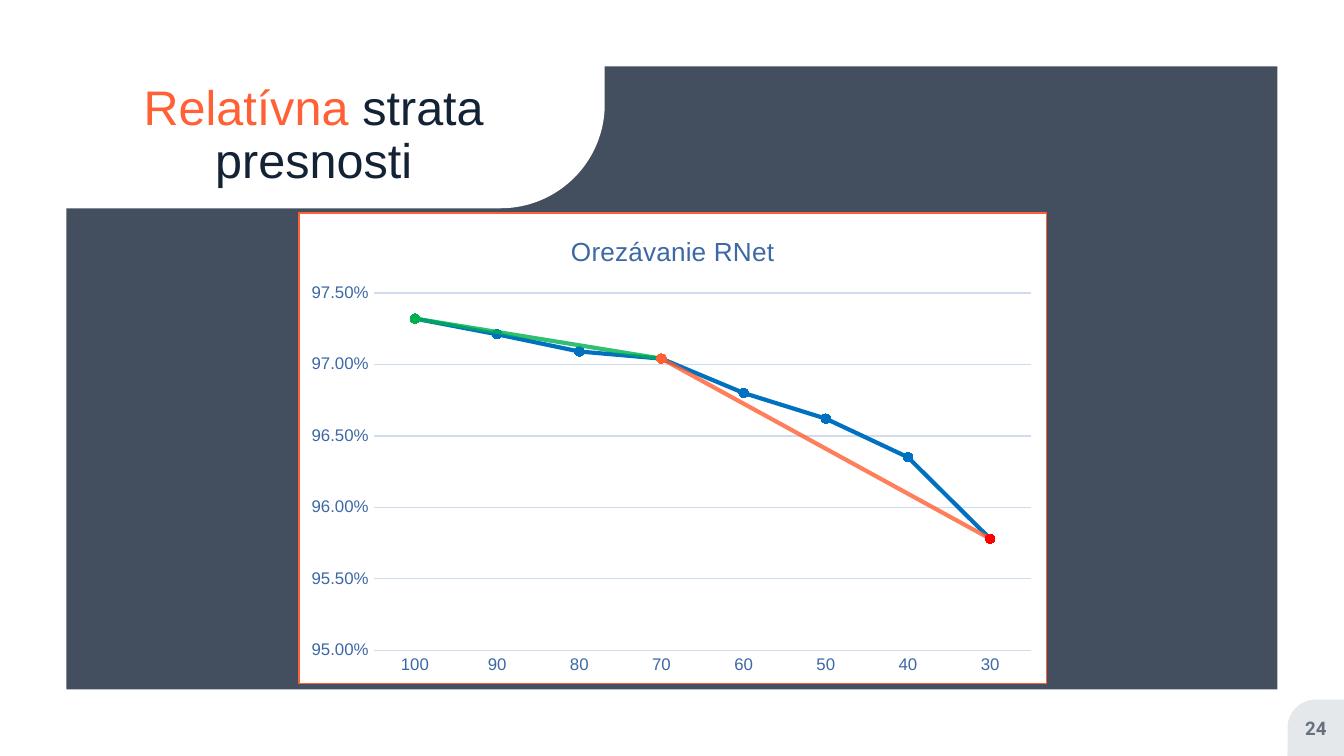
from lxml import etree
from pptx import Presentation
from pptx.chart.data import CategoryChartData
from pptx.dml.color import RGBColor
from pptx.enum import chart as ch, shapes, text
from pptx.oxml import ns, parse_xml
from pptx.util import Inches, Pt

WIDTH = 10
HEIGHT = WIDTH * 9 / 16
NAVY, ORANGE, AXIS, GRID, WHITE = "142236", "FF6035", "3D68A5", "CFDCED", "FFFFFF"

heading = [("Relatívna", ORANGE), (" strata presnosti", NAVY)]
page_number = "24"
chart_heading = "Orezávanie RNet"
kept = ["100", "90", "80", "70", "60", "50", "40", "30"]
accuracy = [0.9732, 0.9721, 0.9709, 0.9704, 0.968, 0.9662, 0.9635, 0.9578]
curves = [
    ("Series 1", range(8), "0070C0", 100),
    ("Series 2", (0, 3), "00B050", 80),
    ("Series 3", (3, 7), ORANGE, 80),
]
last_color = "FF0000"
plot_share = {"x": 0.1, "y": 0.17, "w": 0.88, "h": 0.76}

corner = (WIDTH - 0.42, HEIGHT - 0.42, 0.42, 0.42)
backdrop = [
    ("RECTANGLE", (0, 0, WIDTH, HEIGHT), NAVY, 80, None, None),
    ("FRAME", (0, 0, WIDTH, HEIGHT), WHITE, 100, 0.088, None),
    ("ROUND_1_RECTANGLE", (0, 0, 4.5, 1.55), WHITE, 100, 0.5, "flipV"),
    ("ROUND_1_RECTANGLE", corner, "E5E8EB", 100, 0.5, "flipH"),
]
chart_area = f"""<c:spPr {ns.nsdecls("c", "a")}>
  <a:solidFill><a:srgbClr val="{WHITE}"/></a:solidFill>
  <a:ln w="9525"><a:solidFill><a:srgbClr val="{ORANGE}"/></a:solidFill></a:ln>
</c:spPr>"""


def paint(fill, color, opacity=100):
    fill.solid()
    fill.fore_color.rgb = RGBColor.from_string(color)
    if opacity < 100:
        shade = fill._xPr.find(".//" + ns.qn("a:srgbClr"))
        etree.SubElement(shade, ns.qn("a:alpha")).set("val", str(opacity * 1000))


def style(font, size, color=None, name="Arial", bold=False):
    font.size, font.name, font.bold = Pt(size), name, bold
    if color:
        paint(font.fill, color)


def place(box):
    return [Inches(length) for length in box]


def frame_text(shape):
    frame = shape.text_frame
    frame.word_wrap = True
    frame.auto_size = text.MSO_AUTO_SIZE.NONE
    frame.vertical_anchor = text.MSO_ANCHOR.MIDDLE
    frame.margin_left = frame.margin_right = frame.margin_top = frame.margin_bottom = 0
    line = frame.paragraphs[0]
    line.alignment = text.PP_ALIGN.CENTER
    return line


def add_backdrop(slide):
    for kind, box, color, opacity, adjustment, flip in backdrop:
        panel = slide.shapes.add_shape(shapes.MSO_SHAPE[kind], *place(box))
        panel.shadow.inherit = False
        panel.line.fill.background()
        paint(panel.fill, color, opacity)
        if adjustment:
            panel.adjustments[0] = adjustment
        if flip:
            panel._element.spPr.xfrm.set(flip, "1")


def add_heading(slide):
    title = slide.shapes.title
    slide.shapes._spTree.append(title._element)
    title.left, title.top, title.width, title.height = place((0.6, 0.24, 3.47, 1.55))
    line = frame_text(title)
    line.line_spacing = 0.9
    style(line.font, 26)
    for words, color in heading:
        run = line.add_run()
        run.text = words
        paint(run.font.fill, color)


def add_page_number(slide):
    line = frame_text(slide.shapes.add_textbox(*place(corner)))
    line.text = page_number
    style(line.font, 10, "667180", "Roboto", True)


def style_axes(chart):
    for axis in (chart.category_axis, chart.value_axis):
        axis.major_tick_mark = axis.minor_tick_mark = ch.XL_TICK_MARK.NONE
        style(axis.tick_labels.font, 9, AXIS)
    scale = chart.value_axis
    scale.minimum_scale, scale.maximum_scale, scale.major_unit = 0.95, 0.975, 0.005
    scale.tick_labels.number_format = "0.00%"
    scale.tick_labels.number_format_is_linked = False
    scale.format.line.fill.background()
    scale.has_major_gridlines = True
    for rule in (scale.major_gridlines.format.line, chart.category_axis.format.line):
        paint(rule.fill, GRID)
        rule.width = Pt(0.75)


def style_marker(marker, color):
    marker.style = ch.XL_MARKER_STYLE.CIRCLE
    marker.size = 5
    paint(marker.format.fill, color)
    paint(marker.format.line.fill, color)


def set_chart_area(chart):
    space = chart._chartSpace
    space.find(".//" + ns.qn("c:dispBlanksAs")).set("val", "span")
    plot_area = space.find(".//" + ns.qn("c:plotArea"))
    for automatic in plot_area.findall(ns.qn("c:layout")):
        plot_area.remove(automatic)
    layout = etree.Element(ns.qn("c:layout"))
    plot_area.insert(0, layout)
    manual = etree.SubElement(layout, ns.qn("c:manualLayout"))
    settings = {"layoutTarget": "inner", "xMode": "edge", "yMode": "edge", **plot_share}
    for tag, value in settings.items():
        etree.SubElement(manual, ns.qn("c:" + tag)).set("val", str(value))
    space.find(ns.qn("c:chart")).addnext(parse_xml(chart_area))


def add_accuracy_chart(slide):
    data = CategoryChartData(number_format="0.00%")
    data.categories = kept
    for name, shown, _, _ in curves:
        data.add_series(name, [v if i in shown else None for i, v in enumerate(accuracy)])
    chart = slide.shapes.add_chart(
        ch.XL_CHART_TYPE.LINE_MARKERS, *place((2.22, 1.58, 5.57, 3.51)), data
    ).chart
    style(chart.font, 10, NAVY)
    chart.has_legend = False
    chart.has_title = True
    caption = chart.chart_title.text_frame
    caption.text = chart_heading
    style(caption.paragraphs[0].font, 14, AXIS)
    chart.plots[0].vary_by_categories = False
    style_axes(chart)
    for series, (_, _, color, opacity) in zip(chart.plots[0].series, curves):
        series.smooth = False
        series.format.line.width = Pt(2.25)
        paint(series.format.line.fill, color, opacity)
        style_marker(series.marker, color)
    last_point = series.points[len(kept) - 1]
    style_marker(last_point.marker, last_color)
    last_point.format.line.width = Pt(2.25)
    paint(last_point.format.line.fill, last_color)
    set_chart_area(chart)


def main():
    deck = Presentation()
    deck.slide_width, deck.slide_height = Inches(WIDTH), Inches(HEIGHT)
    slide = deck.slides.add_slide(deck.slide_layouts[5])
    add_backdrop(slide)
    add_heading(slide)
    add_page_number(slide)
    add_accuracy_chart(slide)
    deck.save("out.pptx")


if __name__ == "__main__":
    main()
